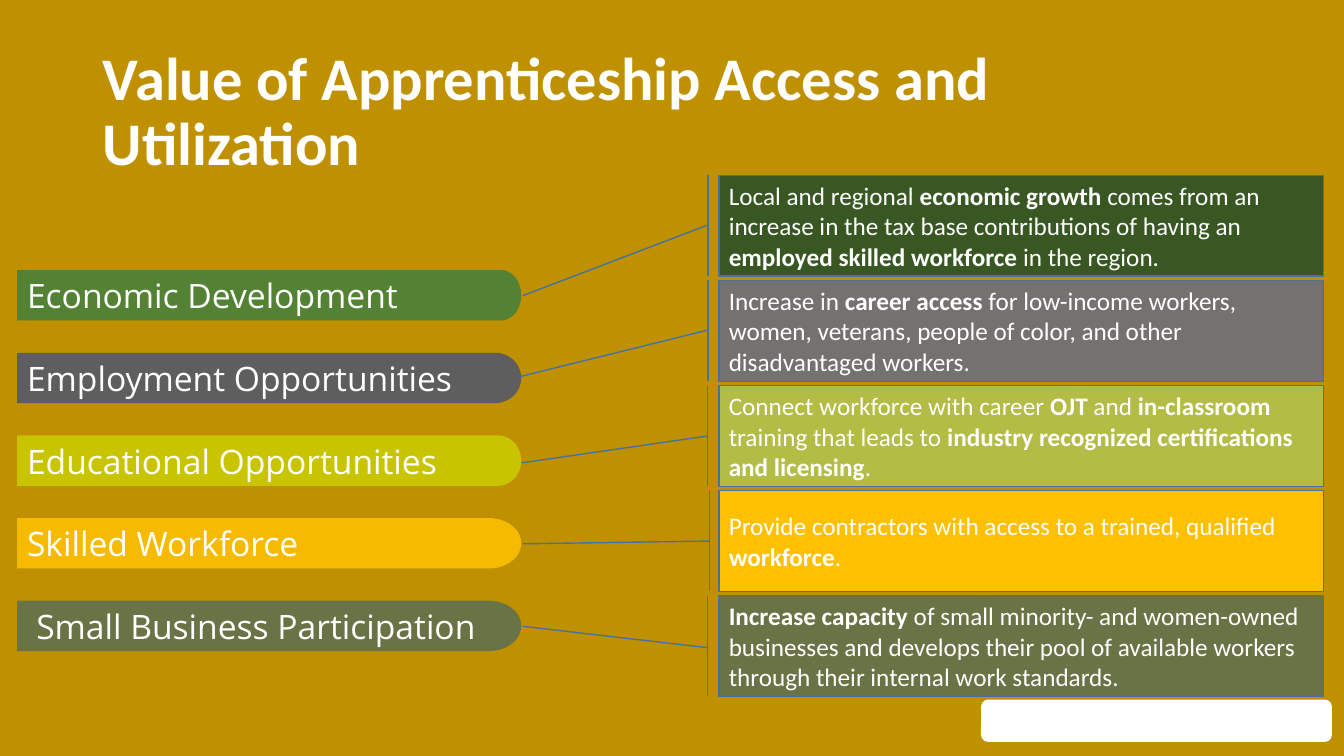
"""Build a slide on the value of apprenticeship access and utilization."""
from math import cos, pi, sin

from pptx import Presentation
from pptx.dml.color import RGBColor
from pptx.enum.shapes import MSO_SHAPE
from pptx.enum.text import MSO_ANCHOR, MSO_AUTO_SIZE, PP_ALIGN
from pptx.util import Inches, Pt


def paint(target, color):
    target.solid()
    target.fore_color.rgb = RGBColor.from_string(color)


def write(frame, runs, size, font):
    frame.word_wrap = True
    frame.auto_size = MSO_AUTO_SIZE.NONE
    frame.vertical_anchor = MSO_ANCHOR.MIDDLE
    paragraph = frame.paragraphs[0]
    paragraph.alignment = PP_ALIGN.LEFT
    for text, bold in runs:
        run = paragraph.add_run()
        run.text = text
        run.font.size = Pt(size)
        run.font.name = font
        run.font.bold = bold
        paint(run.font.fill, "FFFFFF")
    return paragraph


benefits = [
    ("Economic Development", "548235", 0.2, 0.1, "385723",
     (0.492, -0.018, 1.193, -0.324),
     [("Local and regional ", False), ("economic growth ", True),
      ("comes from an increase in the tax base contributions of having an ", False),
      ("employed skilled workforce ", True), ("in the region.", False)]),
    ("Employment Opportunities", "5E5E5E", 0.26, 0.1, "767171",
     (0.492, -0.018, 0.956, -0.33),
     [("Increase in", False), (" career access ", True),
      ("for low-income workers, women, veterans, people of color, "
       "and other disadvantaged workers.", False)]),
    ("Educational Opportunities", "C9C400", 0.23, 0.1, "B3BC44",
     (0.501, -0.019, 0.767, -0.326),
     [("Connect workforce with career ", False), ("OJT", True), (" and ", False),
      ("in-classroom", True), (" training that leads to ", False),
      ("industry recognized certifications and licensing", True), (".", False)]),
    ("Skilled Workforce", "F6BB00", 0.32, 0.1, "FFC000",
     (0.501, -0.016, 0.528, -0.324),
     [("Provide contractors with access to a trained, qualiﬁed ", False),
      ("workforce", True), (".", False)]),
    ("Small Business Participation", "697345", 0.32, 0.19, "697345",
     (0.516, -0.019, 0.304, -0.324),
     [("Increase capacity ", True),
      ("of small minority- and women-owned businesses and develops their pool of "
       "available workers through their internal work standards.", False)]),
]

deck = Presentation()
deck.slide_width, deck.slide_height = Inches(13.33), Inches(7.5)
slide = deck.slides.add_slide(deck.slide_layouts[5])
paint(slide.background.fill, "BF9000")

heading = slide.shapes.title
heading.left, heading.top = Inches(0.92), Inches(0.4)
heading.width, heading.height = Inches(11.5), Inches(1.45)
heading_line = write(heading.text_frame,
                     [("Value of Apprenticeship Access and Utilization", True)],
                     43.2, "Calibri")
heading_line.line_spacing = 0.9

footer_plate = slide.shapes.add_shape(
    MSO_SHAPE.ROUNDED_RECTANGLE, Inches(9.73), Inches(6.94), Inches(3.48), Inches(0.42))
footer_plate.shadow.inherit = False
paint(footer_plate.fill, "FFFFFF")
footer_plate.line.fill.background()

label_left, label_right, label_height = 0.17, 5.17, 0.5
arc_steps = 24

for row, (name, label_color, cap, indent, detail_color, pointer, detail) in enumerate(benefits):
    label_top = 2.68 + 0.82 * row
    outline = slide.shapes.build_freeform(Inches(label_left), Inches(label_top))
    angles = [pi * step / arc_steps - pi / 2 for step in range(arc_steps + 1)]
    curve = [(Inches(label_right - cap + cap * cos(angle)),
              Inches(label_top + label_height / 2 * (1 + sin(angle)))) for angle in angles]
    outline.add_line_segments(curve + [(Inches(label_left), Inches(label_top + label_height))])
    label = outline.convert_to_shape()
    label.shadow.inherit = False
    paint(label.fill, label_color)
    label.line.fill.background()
    label.text_frame.margin_left = Inches(indent)
    write(label.text_frame, [(name, False)], 24, "Open Sans")

    callout = slide.shapes.add_shape(
        MSO_SHAPE.LINE_CALLOUT_1_BORDER_AND_ACCENT_BAR,
        Inches(7.13), Inches(1.74 + 1.0425 * row), Inches(6), Inches(1))
    for index, value in enumerate(pointer):
        callout.adjustments[index] = value
    callout.shadow.inherit = False
    paint(callout.fill, detail_color)
    paint(callout.line.fill, "43739E")
    callout.line.width = Pt(1)
    write(callout.text_frame, detail, 18, "Calibri")

deck.save("out.pptx")
